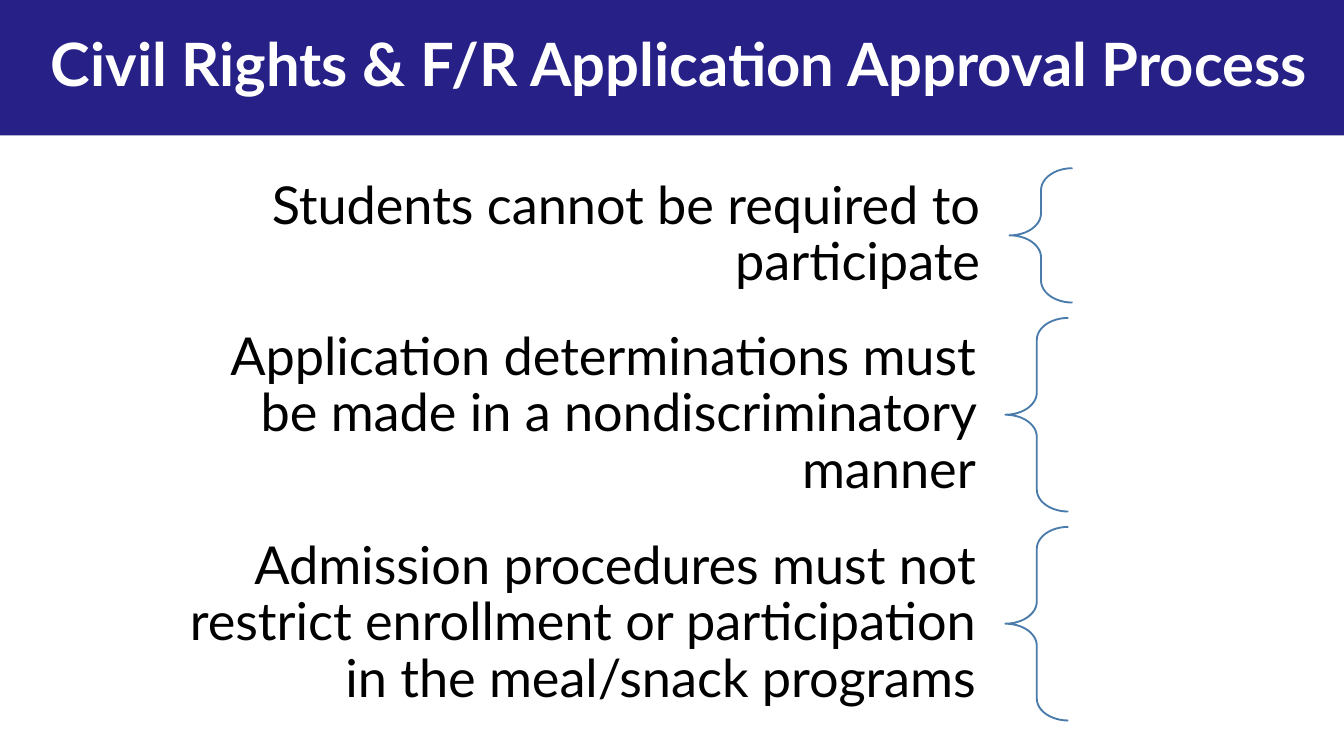
from pptx import Presentation
from pptx.dml.color import RGBColor
from pptx.enum.shapes import MSO_SHAPE
from pptx.enum.text import MSO_ANCHOR, PP_ALIGN
from pptx.util import Cm, Pt


def color(hex_value):
    return RGBColor.from_string(hex_value)


def add_text(left, top, width, height, text, size, hex_value, alignment, margins, bold=False):
    """Add a vertically centred text box; margins are (side, top and bottom) in cm."""
    box = slide.shapes.add_textbox(Cm(left), Cm(top), Cm(width), Cm(height))
    frame = box.text_frame
    frame.word_wrap = True
    frame.vertical_anchor = MSO_ANCHOR.MIDDLE
    frame.margin_left = frame.margin_right = Cm(margins[0])
    frame.margin_top = frame.margin_bottom = Cm(margins[1])
    frame.text = text
    paragraph = frame.paragraphs[0]
    paragraph.alignment = alignment
    paragraph.line_spacing = 0.9
    font = paragraph.runs[0].font
    font.name = "Lato"
    font.size = Pt(size)
    font.bold = bold
    font.color.rgb = color(hex_value)


presentation = Presentation()
presentation.slide_width = Cm(25.4)
presentation.slide_height = Cm(14.29)
slide = presentation.slides.add_slide(presentation.slide_layouts[6])

# Title band
band = slide.shapes.add_shape(MSO_SHAPE.RECTANGLE, Cm(-0.02), Cm(0), Cm(25.42), Cm(2.56))
band.shadow.inherit = False
band.fill.solid()
band.fill.fore_color.rgb = color("262087")
band.line.fill.background()
add_text(0.28, 0, 25.12, 2.54, "Civil Rights & F/R Application Approval Process",
         32, "FFFFFF", PP_ALIGN.CENTER, (0.25, 0.13), bold=True)

# Requirements, each closed by a brace: text, text width, height
requirements = [
    ("Students cannot be required to participate", 16.36, 2.54),
    ("Application determinations must be made in a nondiscriminatory manner", 16.28, 3.66),
    ("Admission procedures must not restrict enrollment or participation "
     "in the meal/snack programs", 16.28, 3.66),
]
left, top, gap = 2.72, 3.18, 0.29
for text, width, height in requirements:
    add_text(left, top, width, height, text, 28, "000000", PP_ALIGN.RIGHT, (0.56, 0.2))
    brace = slide.shapes.add_shape(
        MSO_SHAPE.LEFT_BRACE, Cm(left + width), Cm(top), Cm(1.19), Cm(height))
    brace.adjustments[0] = 0.35
    brace.adjustments[1] = 0.5
    brace.shadow.inherit = False
    brace.fill.background()
    brace.line.color.rgb = color("497CAB")
    brace.line.width = Pt(1)
    top += height + gap

presentation.save("out.pptx")
